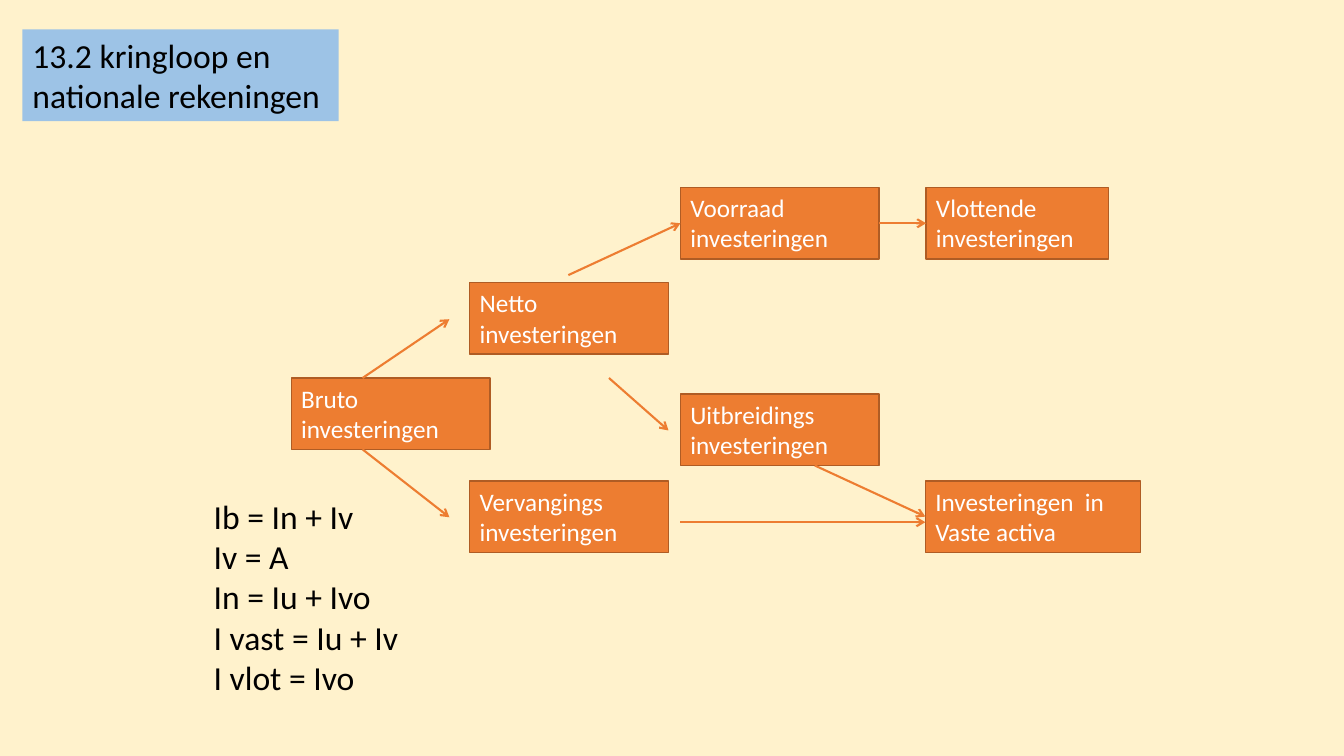
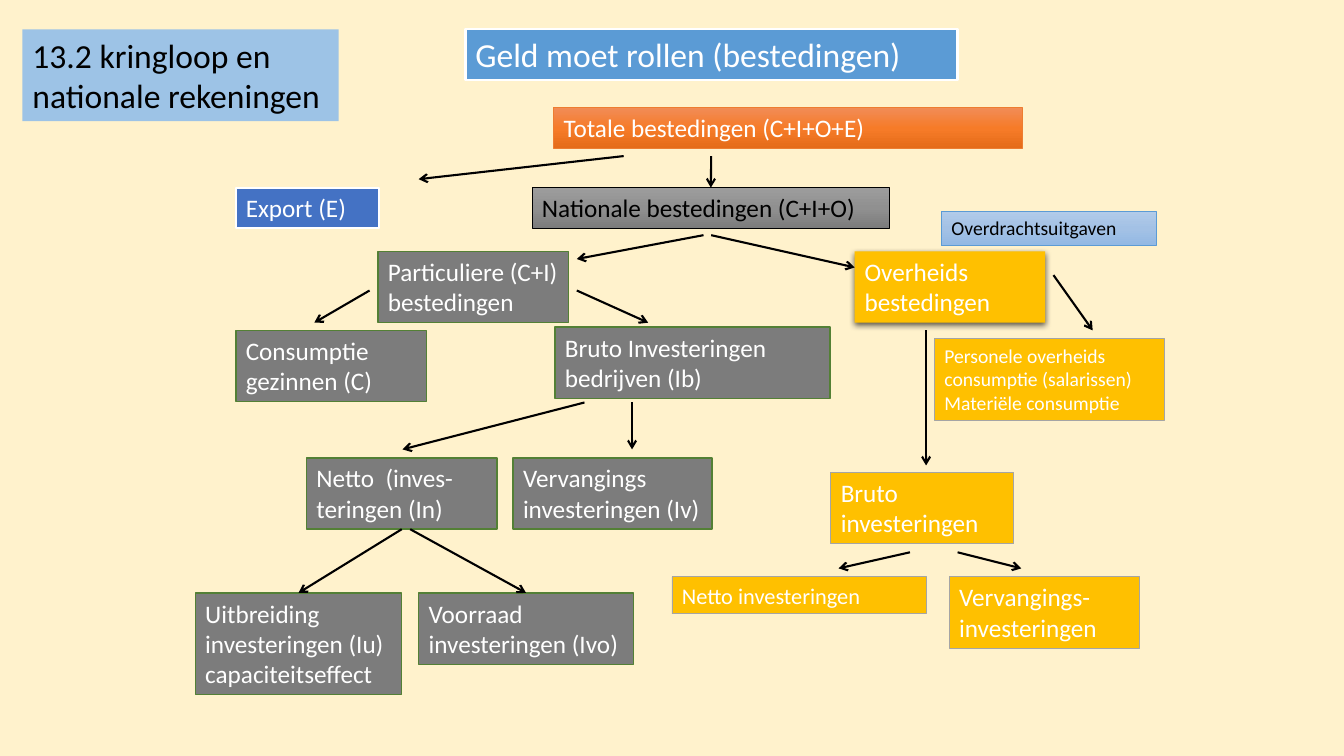
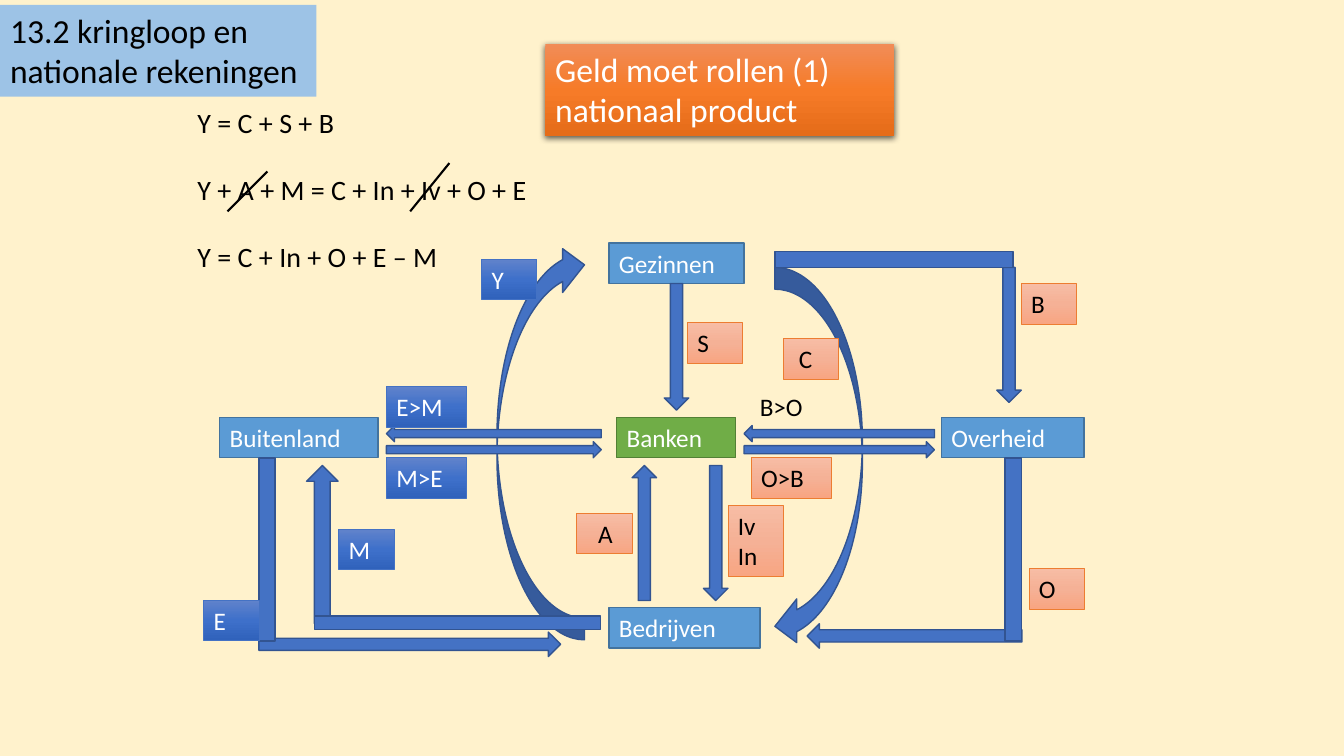
from dataclasses import dataclass
from copy import deepcopy
from typing import NamedTuple

from lxml import etree
from pptx import Presentation
from pptx.dml.color import RGBColor
from pptx.enum.shapes import MSO_CONNECTOR, MSO_SHAPE
from pptx.enum.text import MSO_ANCHOR, MSO_AUTO_SIZE, PP_ALIGN
from pptx.oxml.ns import qn
from pptx.util import Pt

RECT = MSO_SHAPE.RECTANGLE
UP, DOWN = MSO_SHAPE.UP_ARROW, MSO_SHAPE.DOWN_ARROW
TO_LEFT, TO_RIGHT = MSO_SHAPE.LEFT_ARROW, MSO_SHAPE.RIGHT_ARROW
CURVED = MSO_SHAPE.CURVED_LEFT_ARROW
STRAIGHT = MSO_CONNECTOR.STRAIGHT
ALIGN_LEFT, ANCHOR_TOP = PP_ALIGN.LEFT, MSO_ANCHOR.TOP
GROW, FIXED = MSO_AUTO_SIZE.SHAPE_TO_FIT_TEXT, MSO_AUTO_SIZE.NONE
TOP, LEFT, BOTTOM, RIGHT = range(4)

FONT = "Calibri"
TITLE = "13.2 kringloop en nationale rekeningen"
ONE_LINE, TWO_LINES, THREE_LINES = 29, 51, 72.5  # box heights at 18 points

CREAM = RGBColor(0xFF, 0xF2, 0xCC)
PALE_BLUE = RGBColor(0x9D, 0xC3, 0xE6)
BLACK = RGBColor(0, 0, 0)
WHITE = RGBColor(0xFF, 0xFF, 0xFF)
ORANGE = RGBColor(0xED, 0x7D, 0x31)
DARK_ORANGE = RGBColor(0xAF, 0x5C, 0x24)
BLUE = RGBColor(0x5B, 0x9B, 0xD5)
STEEL = RGBColor(0x43, 0x73, 0x9E)
ROYAL = RGBColor(0x44, 0x72, 0xC4)
NAVY = RGBColor(0x32, 0x54, 0x91)
GREEN = RGBColor(0x70, 0xAD, 0x47)
DARK_GREEN = RGBColor(0x53, 0x80, 0x35)
GREY = RGBColor(0x7C, 0x7C, 0x7C)
SILVER = RGBColor(0xA5, 0xA5, 0xA5)
GOLD = RGBColor(0xFF, 0xC0, 0x00)
ORANGE_FADE = (RGBColor(0xF1, 0x8C, 0x57), RGBColor(0xF6, 0x7B, 0x28), RGBColor(0xE5, 0x6C, 0x19))
GREY_FADE = (RGBColor(0x9D, 0x9D, 0x9D), RGBColor(0x90, 0x90, 0x90), GREY)
SKY_FADE = (RGBColor(0xB1, 0xCB, 0xE9), RGBColor(0xA3, 0xC1, 0xE5), RGBColor(0x93, 0xB9, 0xE4))
ROYAL_FADE = (RGBColor(0x61, 0x83, 0xCB), RGBColor(0x3E, 0x70, 0xCA), RGBColor(0x30, 0x62, 0xBB))
SALMON_FADE = (RGBColor(0xF7, 0xBD, 0xA5), RGBColor(0xF5, 0xB1, 0x96), RGBColor(0xF8, 0xA5, 0x82))


@dataclass(frozen=True)
class Style:
    """Look of a shape; fill holds one colour, or three for a vertical fade."""
    fill: tuple
    line: RGBColor = None
    weight: float = 1
    ink: RGBColor = WHITE
    shadow: bool = False


INVESTMENT = Style((ORANGE,), DARK_ORANGE)
BANNER = Style((BLUE,), WHITE, 1.5)
EXPORT = Style((ROYAL,), WHITE, 1.5)
TOTAL = Style(ORANGE_FADE, ORANGE, 0.5)
NATIONAL = Style(GREY_FADE, BLACK, 0.5, BLACK)
PRIVATE = Style((GREY,), DARK_GREEN)
PUBLIC = Style((GOLD,), SILVER, 0.5)
PUBLIC_HEAD = Style((GOLD,), shadow=True)
TRANSFER = Style(SKY_FADE, BLUE, 0.5, BLACK)
PRODUCT_BANNER = Style(ORANGE_FADE, shadow=True)
SECTOR = Style((BLUE,), STEEL)
BANK = Style((GREEN,), DARK_GREEN)
FLOW = Style((ROYAL,), NAVY)
ROYAL_LABEL = Style(ROYAL_FADE, ROYAL, 0.5)
SALMON_LABEL = Style(SALMON_FADE, ORANGE, 0.5, BLACK)


class Joint(NamedTuple):
    """Middle of one side of a box, to which a line is joined."""
    box: object
    side: int


def points(*lengths):
    return [Pt(length) for length in lengths]


def write(shape, text, ink, size, gap=0, indent=0, fit=GROW):
    """Fill a shape with one paragraph per line of text, gap points apart."""
    frame = shape.text_frame
    frame.text = text
    frame.word_wrap = True
    frame.auto_size = fit
    frame.vertical_anchor = ANCHOR_TOP
    frame.margin_left = Pt(7.2 + indent)
    for paragraph in frame.paragraphs:
        paragraph.alignment = ALIGN_LEFT
        paragraph.font.name = FONT
        paragraph.font.size = Pt(size)
        paragraph.font.color.rgb = ink
    if gap:
        for paragraph in frame.paragraphs[1:]:
            paragraph.space_before = Pt(gap)


def fade(shape, colours):
    shape.fill.gradient()
    shape.fill.gradient_angle = 270
    stops = shape._element.spPr.find(".//" + qn("a:gsLst"))
    stops.insert(1, deepcopy(stops[0]))
    for stop, colour, position in zip(shape.fill.gradient_stops, colours, (0, 0.5, 1)):
        stop.color.rgb = colour
        stop.position = position


def cast_shadow(shape):
    effects = shape._element.spPr.find(qn("a:effectLst"))
    shadow = etree.SubElement(effects, qn("a:outerShdw"), blurRad=str(Pt(4.5)),
                              dist=str(Pt(1.5)), dir="5400000", algn="ctr", rotWithShape="0")
    colour = etree.SubElement(shadow, qn("a:srgbClr"), val="000000")
    etree.SubElement(colour, qn("a:alpha"), val="63000")


def draw(slide, kind, frame, style):
    shape = slide.shapes.add_shape(kind, *points(*frame))
    shape.shadow.inherit = False
    if len(style.fill) == 1:
        shape.fill.solid()
        shape.fill.fore_color.rgb = style.fill[0]
    else:
        fade(shape, style.fill)
    if style.line is None:
        shape.line.fill.background()
    else:
        shape.line.color.rgb = style.line
        shape.line.width = Pt(style.weight)
    if style.shadow:
        cast_shadow(shape)
    return shape


def box(slide, text, frame, style, size=18, indent=0):
    shape = draw(slide, RECT, frame, style)
    write(shape, text, style.ink, size, indent=indent)
    return shape


def plain_text(slide, text, frame, size, gap=0, indent=0):
    write(slide.shapes.add_textbox(*points(*frame)), text, BLACK, size, gap, indent)


def line(slide, start, end, colour, arrow=True):
    """Draw a line between two ends, each a point or a Joint."""
    corners = [(0, 0) if isinstance(tip, Joint) else tip for tip in (start, end)]
    connector = slide.shapes.add_connector(STRAIGHT, *points(*corners[0], *corners[1]))
    if isinstance(start, Joint):
        connector.begin_connect(*start)
    if isinstance(end, Joint):
        connector.end_connect(*end)
    connector.line.color.rgb = colour
    connector.line.width = Pt(1.5)
    properties = connector._element.spPr
    if arrow:
        etree.SubElement(properties.find(qn("a:ln")), qn("a:tailEnd"), type="arrow")
    etree.SubElement(properties, qn("a:effectLst"))


def add_slide(prs, left=16, top=21):
    slide = prs.slides.add_slide(prs.slide_layouts[5])
    title = slide.shapes.title
    title.left, title.top, title.width, title.height = points(left, top, 226, 65.5)
    title.fill.solid()
    title.fill.fore_color.rgb = PALE_BLUE
    write(title, TITLE, BLACK, 24, fit=FIXED)
    return slide


def investment_slide(prs):
    slide = add_slide(prs)

    def investment(text, left, top, width=142):
        return box(slide, text, (left, top, width, TWO_LINES), INVESTMENT)

    investment("Bruto\ninvesteringen", 208, 270)
    investment("Netto\ninvesteringen", 335.5, 202)
    investment("Vervangings\ninvesteringen", 335.5, 343.5)
    stock = investment("Voorraad\ninvesteringen", 486, 134)
    investment("Uitbreidings\ninvesteringen", 486, 281.5)
    current = investment("Vlottende\ninvesteringen", 661.5, 134, 130.5)
    fixed = investment("Investeringen  in\nVaste activa", 661, 343.5, 153.5)

    for start, end in (
        ((259, 270), (321, 228)),
        ((259, 321), (321, 369.5)),
        (Joint(stock, RIGHT), Joint(current, LEFT)),
        ((406, 196.5), Joint(stock, LEFT)),
        ((582, 332.5), Joint(fixed, LEFT)),
        ((435, 270), (477.5, 307.5)),
        ((486, 373), (661, 373)),
    ):
        line(slide, start, end, ORANGE)
    plain_text(slide, "Ib = In + Iv\nIv = A\nIn = Iu + Ivo\nI vast = Iu + Iv\nI vlot = Ivo",
               (145.5, 350.5, 170, 152.5), 24)


def spending_slide(prs):
    slide = add_slide(prs)
    box(slide, "Geld moet rollen (bestedingen)", (332.5, 21, 351.5, 36), BANNER, 24)
    box(slide, "Totale bestedingen (C+I+O+E)", (395.5, 77, 335, ONE_LINE), TOTAL)
    box(slide, "Export (E)", (168.5, 134, 102, ONE_LINE), EXPORT)
    national = box(slide, "Nationale bestedingen (C+I+O)", (380, 134, 255.5, ONE_LINE), NATIONAL)

    def private(text, left, top, width=136, height=TWO_LINES):
        return box(slide, text, (left, top, width, height), PRIVATE)

    private("Particuliere (C+I)\nbestedingen", 270, 179.5)
    private("Consumptie gezinnen (C)", 168.5, 236)
    private("Bruto Investeringen bedrijven (Ib)", 396.5, 233.5, 196.5)
    net = private("Netto  (inves-teringen (In)", 219, 327)
    private("Vervangings investeringen (Iv)", 366.5, 327, 142)
    expansion = private("Uitbreiding investeringen (Iu)\ncapaciteitseffect",
                        139.5, 423.5, 147.5, THREE_LINES)
    stock = private("Voorraad investeringen (Ivo)", 299, 423.5, 153.5)

    box(slide, "Overdrachtsuitgaven", (672.5, 151, 153.5, 24.5), TRANSFER, 14)
    box(slide, "Overheids bestedingen", (610.5, 179.5, 136, TWO_LINES), PUBLIC_HEAD)
    box(slide, "Personele overheids consumptie (salarissen)\nMateriële consumptie",
        (667.5, 242, 164, 58.5), PUBLIC, 14)
    box(slide, "Bruto investeringen", (593.5, 337.5, 130.5, TWO_LINES), PUBLIC)
    box(slide, "Netto investeringen", (480, 412, 181.5, 26.5), PUBLIC, 16)
    box(slide, "Vervangings- investeringen", (678, 412, 136, TWO_LINES), PUBLIC)

    for start, end in (
        ((445.5, 111.5), (299, 128)),
        ((508, 111.5), Joint(national, TOP)),
        ((502.5, 168), (412, 185)),
        ((508, 168), (610.5, 191)),
        ((264, 207.5), (224.5, 230.5)),
        ((412, 207.5), (463, 230.5)),
        ((417.5, 287.5), (287.5, 321)),
        ((451.5, 287.5), (451.5, 321)),
        (Joint(net, BOTTOM), Joint(expansion, TOP)),
        ((293, 378), Joint(stock, TOP)),
        ((752.5, 196.5), (780.5, 236)),
        ((661.5, 236), (661.5, 332.5)),
        ((650, 394.5), (599, 406)),
        ((684, 394.5), (729.5, 406)),
    ):
        line(slide, start, end, BLACK)


def circular_flow_slide(prs):
    slide = add_slide(prs, 0, 3.5)
    box(slide, "Geld moet rollen (1) nationaal product", (389.5, 31.5, 249, 65.5),
        PRODUCT_BANNER, 24)
    for name, left, top, width, style in (
        ("Overheid", 672.5, 298, 102, SECTOR),
        ("Buitenland", 157, 298, 113, SECTOR),
        ("Gezinnen", 435, 173.5, 96.5, SECTOR),
        ("Bedrijven", 435, 434, 108, SECTOR),
        ("Banken", 440.5, 298, 85, BANK),
    ):
        box(slide, name, (left, top, width, ONE_LINE), style)

    draw(slide, CURVED, (553.5, 191, 62.5, 272), FLOW)
    draw(slide, CURVED, (355, 173.5, 62.5, 283.5), FLOW).rotation = 180
    for kind, *frame in (
        (TO_LEFT, 576.5, 445.5, 153.5, 17.5),
        (UP, 219, 332.5, 22.5, 113),
        (TO_RIGHT, 185, 451.5, 215.5, 17.5),
        (DOWN, 712, 191, 17.5, 96.5),
        (DOWN, 474.5, 202.5, 17.5, 90.5),
        (DOWN, 502.5, 332.5, 17.5, 96.5),
        (UP, 451.5, 332.5, 17.5, 96.5),
        (RECT, 224.5, 440, 204.5, 9.5),
        (RECT, 185, 327, 11.5, 131),
        (RECT, 718, 327, 11.5, 131),
        (RECT, 553.5, 179.5, 170, 11.5),
    ):
        draw(slide, kind, frame, FLOW)
    for left, width in ((276, 153.5), (531.5, 136)):
        draw(slide, TO_LEFT, (left, 304, width, 11.5), FLOW)
        draw(slide, TO_RIGHT, (left, 315.5, width, 11.5), FLOW)

    narrow, wide = 39.5, 57
    for text, left, top, width, style in (
        ("Y", 344, 185, narrow, ROYAL_LABEL),
        ("M", 242, 378, narrow, ROYAL_LABEL),
        ("E", 145.5, 428.5, narrow, ROYAL_LABEL),
        ("E>M", 276, 276, wide, ROYAL_LABEL),
        ("M>E", 276, 327, wide, ROYAL_LABEL),
        ("O>B", 536.5, 327, wide, SALMON_LABEL),
        ("S", 491, 230.5, narrow, SALMON_LABEL),
        ("B", 729.5, 202.5, narrow, SALMON_LABEL),
        ("O", 735, 406, narrow, SALMON_LABEL),
    ):
        box(slide, text, (left, top, width, ONE_LINE), style)
    box(slide, "C", (559.5, 242, narrow, ONE_LINE), SALMON_LABEL, indent=4)
    box(slide, "A", (412, 366.5, narrow, ONE_LINE), SALMON_LABEL, indent=8)
    box(slide, "Iv In", (520, 361, narrow, TWO_LINES), SALMON_LABEL)
    plain_text(slide, "B>O", (531.5, 276, 62.5, ONE_LINE), 18, indent=4)

    plain_text(slide, "Y = C + S + B\nY + A + M = C + In + Iv + O + E\nY = C + In + O + E – M",
               (134, 71.5, 260.5, 128), 20, gap=24)
    line(slide, (162.5, 151), (191, 122.5), BLACK, arrow=False)
    line(slide, (293, 151), (321, 116.5), BLACK, arrow=False)


def main():
    prs = Presentation()
    prs.slide_width, prs.slide_height = points(960, 540)
    background = prs.slide_master.background.fill
    background.solid()
    background.fore_color.rgb = CREAM
    investment_slide(prs)
    spending_slide(prs)
    circular_flow_slide(prs)
    prs.save("out.pptx")


if __name__ == "__main__":
    main()
